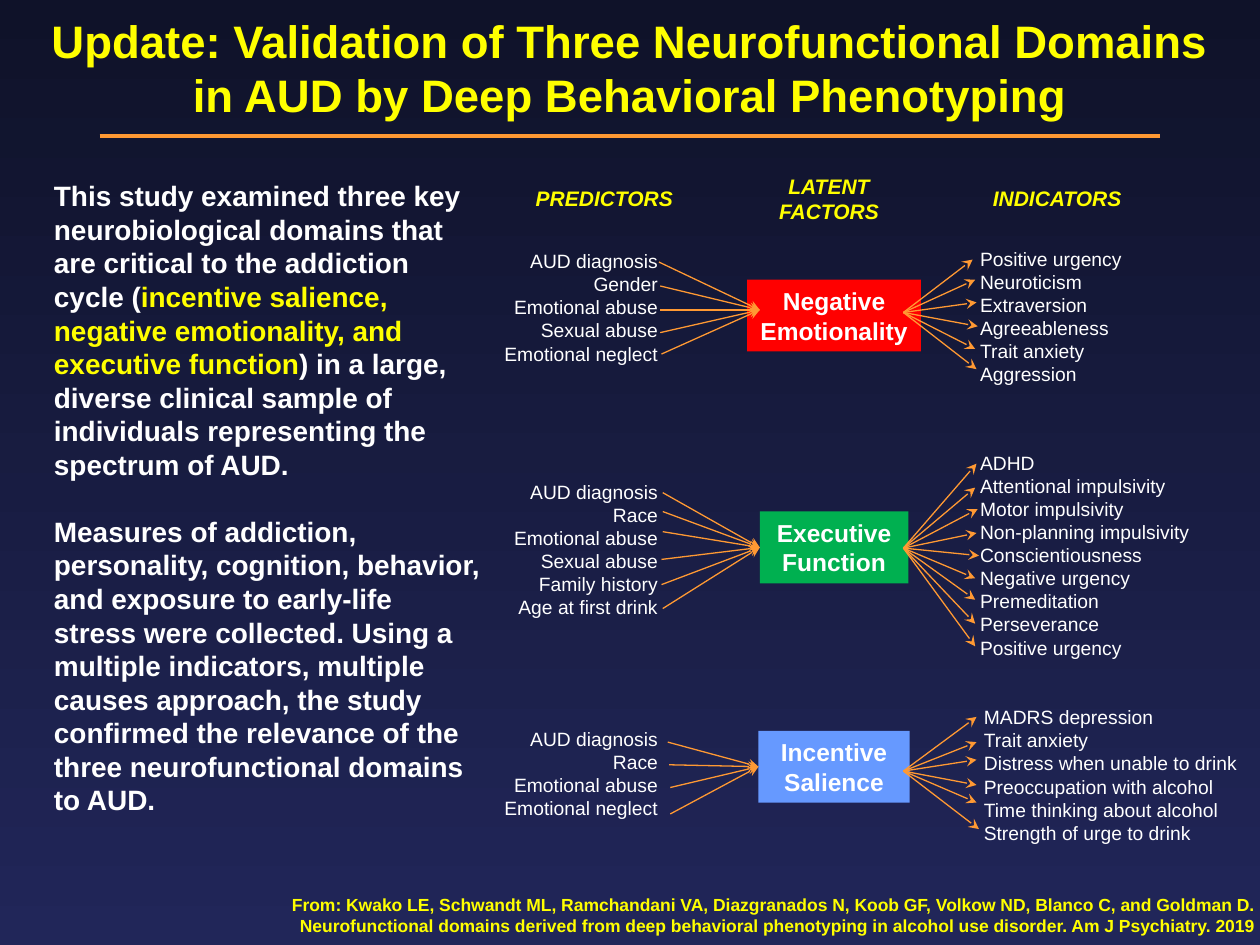
from lxml import etree
from pptx import Presentation
from pptx.dml.color import RGBColor
from pptx.enum.shapes import MSO_CONNECTOR, MSO_SHAPE
from pptx.enum.text import MSO_ANCHOR, MSO_AUTO_SIZE, PP_ALIGN
from pptx.oxml.ns import qn
from pptx.util import Pt

LEFT, MID, RIGHT = PP_ALIGN.LEFT, PP_ALIGN.CENTER, PP_ALIGN.RIGHT
TOP, CENTRE = MSO_ANCHOR.TOP, MSO_ANCHOR.MIDDLE
RECT, LINE = MSO_SHAPE.RECTANGLE, MSO_CONNECTOR.STRAIGHT
GROW, FIXED = MSO_AUTO_SIZE.SHAPE_TO_FIT_TEXT, MSO_AUTO_SIZE.NONE
SCALE = 9144
LEFT_SIDE = 1

COLOURS = {
    "white": "FFFFFF", "yellow": "FFFF00", "orange": "FF9933",
    "red": "FF0000", "green": "00B050", "blue": "6699FF",
    "dark": "0F1229", "navy": "212659",
}

FORMATS = {
    "title": {"size": Pt(26), "bold": True},
    "body": {"size": Pt(16), "bold": True},
    "box": {"size": Pt(14), "bold": True},
    "head": {"size": Pt(12), "bold": True, "italic": True},
    "list": {"size": Pt(11), "bold": False},
    "source": {"size": Pt(10), "bold": True},
}

TITLE = [("Update: Validation of Three Neurofunctional Domains", "yellow"),
         ("in AUD by Deep Behavioral Phenotyping", "yellow")]

BODY = [
    [("This study examined three key neurobiological domains that are critical "
      "to the addiction cycle (", "white"),
     ("incentive salience, negative emotionality, and executive function", "yellow"),
     (") in a large, diverse clinical sample of individuals representing the "
      "spectrum of AUD.", "white")],
    [("Measures of addiction, personality, cognition, behavior, and exposure to "
      "early-life stress were collected. Using a multiple indicators, multiple "
      "causes approach, the study confirmed the relevance of the three "
      "neurofunctional domains to AUD.", "white")],
]

SOURCE = ("From: Kwako LE, Schwandt ML, Ramchandani VA, Diazgranados N, Koob GF, "
          "Volkow ND, Blanco C, and Goldman D. Neurofunctional domains derived from "
          "deep behavioral phenotyping in alcohol use disorder. Am J Psychiatry. 2019")

HEADS = [
    ("PREDICTORS", (383, 142, 161, 30), RIGHT),
    ("LATENT FACTORS", (601, 133, 114, 50), MID),
    ("INDICATORS", (750, 142, 150, 30), RIGHT),
]

DOMAINS = [
    {"name": "Negative Emotionality", "fill": "red", "box": (593, 222, 138, 57),
     "causes": ["AUD diagnosis", "Gender", "Emotional abuse", "Sexual abuse",
                "Emotional neglect"],
     "cause_at": (300, 193, 232, 103),
     "tails": [(523, 208), (524, 227), (524, 246), (524, 264), (525, 281)],
     "inlet": (603, 246), "glue": False,
     "signs": ["Positive urgency", "Neuroticism", "Extraversion", "Agreeableness",
               "Trait anxiety", "Aggression"],
     "sign_at": (768, 191, 161, 121), "outlet": (717, 248),
     "tips": [(772, 206), (774, 222), (775, 240), (776, 259), (774, 277), (775, 293)]},
    {"name": "Executive Function", "fill": "green", "box": (603, 406, 118, 57),
     "causes": ["AUD diagnosis", "Race", "Emotional abuse", "Sexual abuse",
                "Family history", "Age at first drink"],
     "cause_at": (300, 376, 232, 121),
     "tails": [(526, 391), (526, 406), (526, 422), (525, 444), (525, 464), (526, 483)],
     "inlet": (603, 435), "glue": True,
     "signs": ["ADHD", "Attentional impulsivity", "Motor impulsivity",
               "Non-planning impulsivity", "Conscientiousness", "Negative urgency",
               "Premeditation", "Perseverance", "Positive urgency"],
     "sign_at": (768, 353, 204, 177), "outlet": (717, 435),
     "tips": [(775, 368), (774, 387), (776, 404), (775, 423), (777, 441),
              (774, 459), (774, 476), (774, 495), (774, 513)]},
    {"name": "Incentive Salience", "fill": "blue", "box": (602, 580, 120, 57),
     "causes": ["AUD diagnosis", "Race", "Emotional abuse", "Emotional neglect"],
     "cause_at": (300, 572, 232, 84),
     "tails": [(530, 589), (531, 607), (532, 625), (532, 646)],
     "inlet": (602, 609), "glue": True,
     "signs": ["MADRS depression", "Trait anxiety", "Distress when unable to drink",
               "Preoccupation with alcohol", "Time thinking about alcohol",
               "Strength of urge to drink"],
     "sign_at": (771, 555, 221, 121), "outlet": (717, 612),
     "tips": [(775, 569), (775, 589), (775, 603), (775, 623), (775, 637), (777, 658)]},
]


def px(*values):
    """Turn px lengths into EMU."""
    return [value * SCALE for value in values]


def hue(name):
    """Look up a colour by name."""
    return RGBColor.from_string(COLOURS[name])


class Painter:
    """Hold the style and the current slide."""

    def __init__(self, slide, font="Arial"):
        """Keep the slide and the font name."""
        self.slide = slide
        self.font = font

    def ground(self, first, last):
        """Fill the background from top to bottom."""
        fill = self.slide.background.fill
        fill.gradient()
        fill.gradient_angle = 270
        for stop, name in zip(fill.gradient_stops, (first, last)):
            stop.color.rgb = hue(name)

    def put(self, shape, paras, style, align, anchor=TOP, gap=0, size=GROW, split=False):
        """Put paragraphs of coloured runs into a shape."""
        frame = shape.text_frame
        for key, value in {"word_wrap": True, "auto_size": size,
                           "vertical_anchor": anchor}.items():
            setattr(frame, key, value)
        for index, runs in enumerate(paras):
            para = frame.add_paragraph() if index else frame.paragraphs[0]
            para.alignment = align
            if index and gap:
                para.space_before = Pt(gap)
            for order, (words, tint) in enumerate(runs):
                if order and split:
                    para.add_line_break()
                run = para.add_run()
                run.text = words
                run.font.color.rgb = hue(tint)
                for key, value in {"name": self.font, **FORMATS[style]}.items():
                    setattr(run.font, key, value)

    def title(self, lines, area):
        """Place and format the title."""
        shape = self.slide.shapes.title
        shape.left, shape.top, shape.width, shape.height = px(*area)
        for side in ("left", "top", "right", "bottom"):
            setattr(shape.text_frame, f"margin_{side}", 0)
        self.put(shape, [lines], "title", MID, CENTRE, size=FIXED, split=True)

    def text(self, paras, area, style, align=LEFT, gap=0):
        """Add a text box."""
        shape = self.slide.shapes.add_textbox(*px(*area))
        self.put(shape, paras, style, align, gap=gap)

    def box(self, words, area, fill):
        """Add a filled box with centred text."""
        shape = self.slide.shapes.add_shape(RECT, *px(*area))
        shape.shadow.inherit = False
        shape.fill.solid()
        shape.fill.fore_color.rgb = hue(fill)
        shape.line.fill.background()
        self.put(shape, [[(words, "white")]], "box", MID, CENTRE)
        return shape

    def line(self, start, end, width=0.75, arrow=True, goal=None):
        """Add a line, with an arrowhead and a joined end if asked."""
        link = self.slide.shapes.add_connector(LINE, *px(*start, *end))
        link.line.color.rgb = hue("orange")
        link.line.width = Pt(width)
        props = link._element.spPr
        if arrow:
            etree.SubElement(props.find(qn("a:ln")), qn("a:tailEnd"), type="stealth")
        etree.SubElement(props, qn("a:effectLst"))
        if goal is not None:
            link.end_connect(goal, LEFT_SIDE)

    def domain(self, data):
        """Add a domain with its predictors and indicators."""
        box = self.box(data["name"], data["box"], data["fill"])
        for part, area, align in (("causes", "cause_at", RIGHT), ("signs", "sign_at", LEFT)):
            paras = [[(words, "white")] for words in data[part]]
            self.text(paras, data[area], "list", align)
        for tail in data["tails"]:
            self.line(tail, data["inlet"], goal=box if data["glue"] else None)
        for tip in data["tips"]:
            self.line(data["outlet"], tip)


def main():
    """Build and save the slide."""
    deck = Presentation()
    deck.slide_width, deck.slide_height = px(1000, 750)
    paint = Painter(deck.slides.add_slide(deck.slide_layouts[5]))
    paint.ground("dark", "navy")
    paint.title(TITLE, (0, 9, 1000, 89))
    paint.line((79, 108), (921, 108), width=2.25, arrow=False)
    paint.text(BODY, (33, 137, 359, 522), "body", gap=19)
    for words, area, align in HEADS:
        paint.text([[(words, "yellow")]], area, "head", align)
    for data in DOMAINS:
        paint.domain(data)
    paint.text([[(SOURCE, "yellow")]], (208, 705, 797, 44), "source", RIGHT)
    deck.save("out.pptx")


if __name__ == "__main__":
    main()
